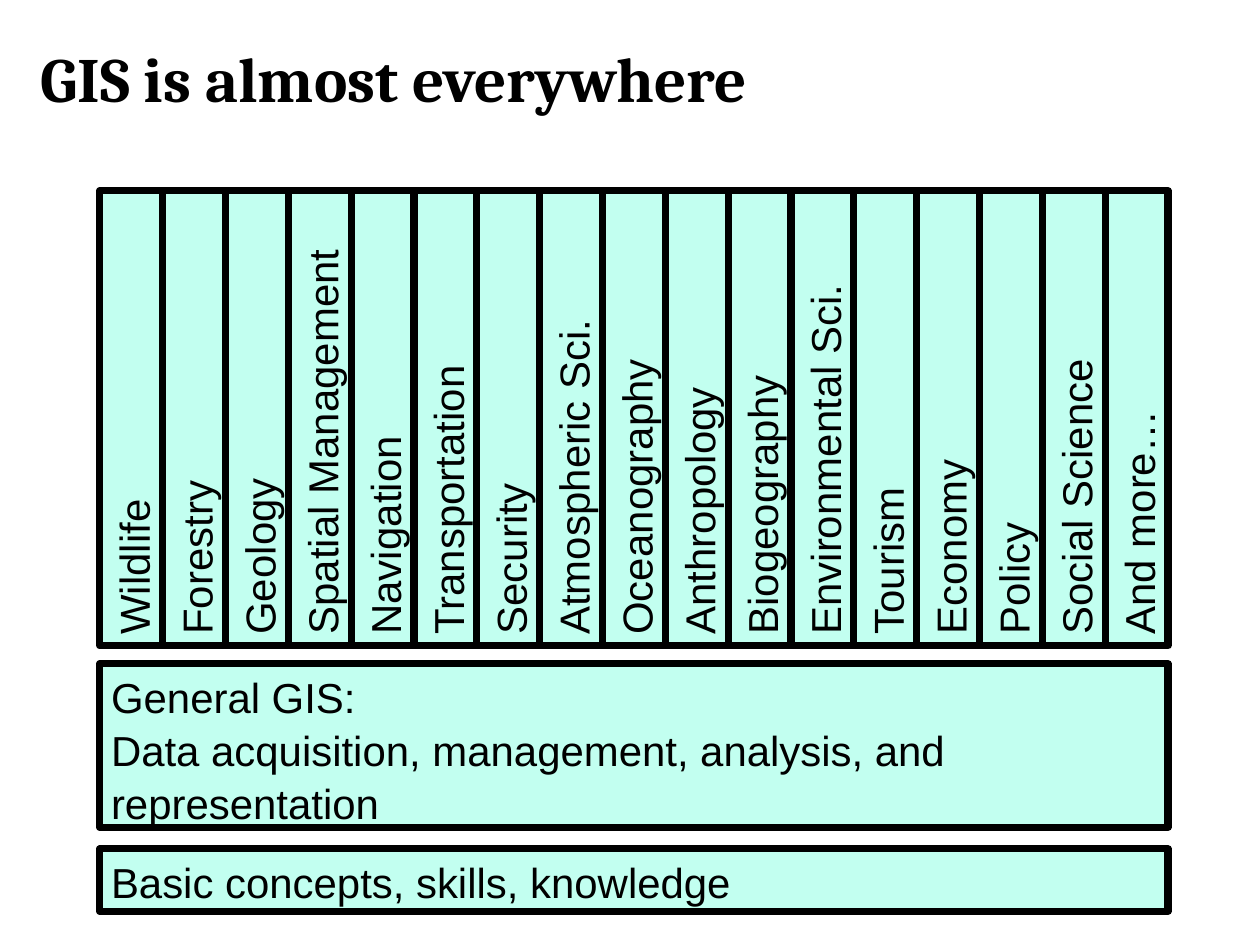
from dataclasses import dataclass

from pptx import Presentation
from pptx.dml.color import RGBColor
from pptx.enum.shapes import MSO_SHAPE
from pptx.enum.text import MSO_ANCHOR, PP_ALIGN
from pptx.util import Inches, Pt

RECT = MSO_SHAPE.RECTANGLE
LEFT = PP_ALIGN.LEFT
TOP, MIDDLE = MSO_ANCHOR.TOP, MSO_ANCHOR.MIDDLE


@dataclass(frozen=True)
class Theme:
    ink: RGBColor = RGBColor(0, 0, 0)
    mint: RGBColor = RGBColor(0xC2, 0xFF, 0xF0)
    title_font: str = "Cambria"
    body_font: str = "Arial"
    title_size: float = 40
    body_size: float = 26.6
    border: float = 4.5


THEME = Theme()
WIDTH, HEIGHT = 11.1, 8.3
STACK_LEFT, STACK_WIDTH = 0.88, 9.41
TITLE_BOX = (0.25, 0.17, 8.92, 1.02)
FIELDS_BOX = (STACK_LEFT, 1.68, STACK_WIDTH, 4.01)
GENERAL_BOX = (STACK_LEFT, 5.85, STACK_WIDTH, 1.44)
BASICS_BOX = (STACK_LEFT, 7.48, STACK_WIDTH, 0.55)

FIELDS = [
    "Wildlife", "Forestry", "Geology", "Spatial Management", "Navigation",
    "Transportation", "Security", "Atmospheric Sci.", "Oceanography",
    "Anthropology", "Biogeography", "Environmental Sci.", "Tourism",
    "Economy", "Policy", "Social Science", "And more…",
]
GENERAL = [
    "General GIS:",
    "Data acquisition, management, analysis, and representation",
]
BASICS = "Basic concepts, skills, knowledge"


def write(tf, lines, font=THEME.body_font, size=THEME.body_size, bold=False,
          anchor=TOP, spacing=1.05, inset=(0.1, 0.05)):
    tf.word_wrap = True
    tf.vertical_anchor = anchor
    tf.margin_left = tf.margin_right = Inches(inset[0])
    tf.margin_top = tf.margin_bottom = Inches(inset[1])
    for i, line in enumerate(lines):
        p = tf.add_paragraph() if i else tf.paragraphs[0]
        p.alignment = LEFT
        p.line_spacing = spacing
        r = p.add_run()
        r.text = line
        r.font.name = font
        r.font.size = Pt(size)
        r.font.bold = bold
        r.font.color.rgb = THEME.ink


def add_title(s, box, text):
    sp = s.shapes.add_textbox(*map(Inches, box))
    write(sp.text_frame, [text], font=THEME.title_font, size=THEME.title_size,
          bold=True, anchor=MIDDLE, spacing=1.0, inset=(0.11, 0.06))


def add_bar(s, box, lines, rotation=0):
    sp = s.shapes.add_shape(RECT, *map(Inches, box))
    sp.rotation = rotation
    sp.shadow.inherit = False
    sp.fill.solid()
    sp.fill.fore_color.rgb = THEME.mint
    sp.line.color.rgb = THEME.ink
    sp.line.width = Pt(THEME.border)
    write(sp.text_frame, lines)


def add_fields(s, box, names):
    left, top, width, height = box
    column = width / len(names)
    bar_top = top + (height - column) / 2
    for i, name in enumerate(names):
        center = left + (i + 0.5) * column
        add_bar(s, (center - height / 2, bar_top, height, column), [name], rotation=270)


def main():
    prs = Presentation()
    prs.slide_width, prs.slide_height = Inches(WIDTH), Inches(HEIGHT)
    s = prs.slides.add_slide(prs.slide_layouts[6])
    add_bar(s, BASICS_BOX, [BASICS])
    add_bar(s, GENERAL_BOX, GENERAL)
    add_fields(s, FIELDS_BOX, FIELDS)
    add_title(s, TITLE_BOX, "GIS is almost everywhere")
    prs.save("out.pptx")


if __name__ == "__main__":
    main()
